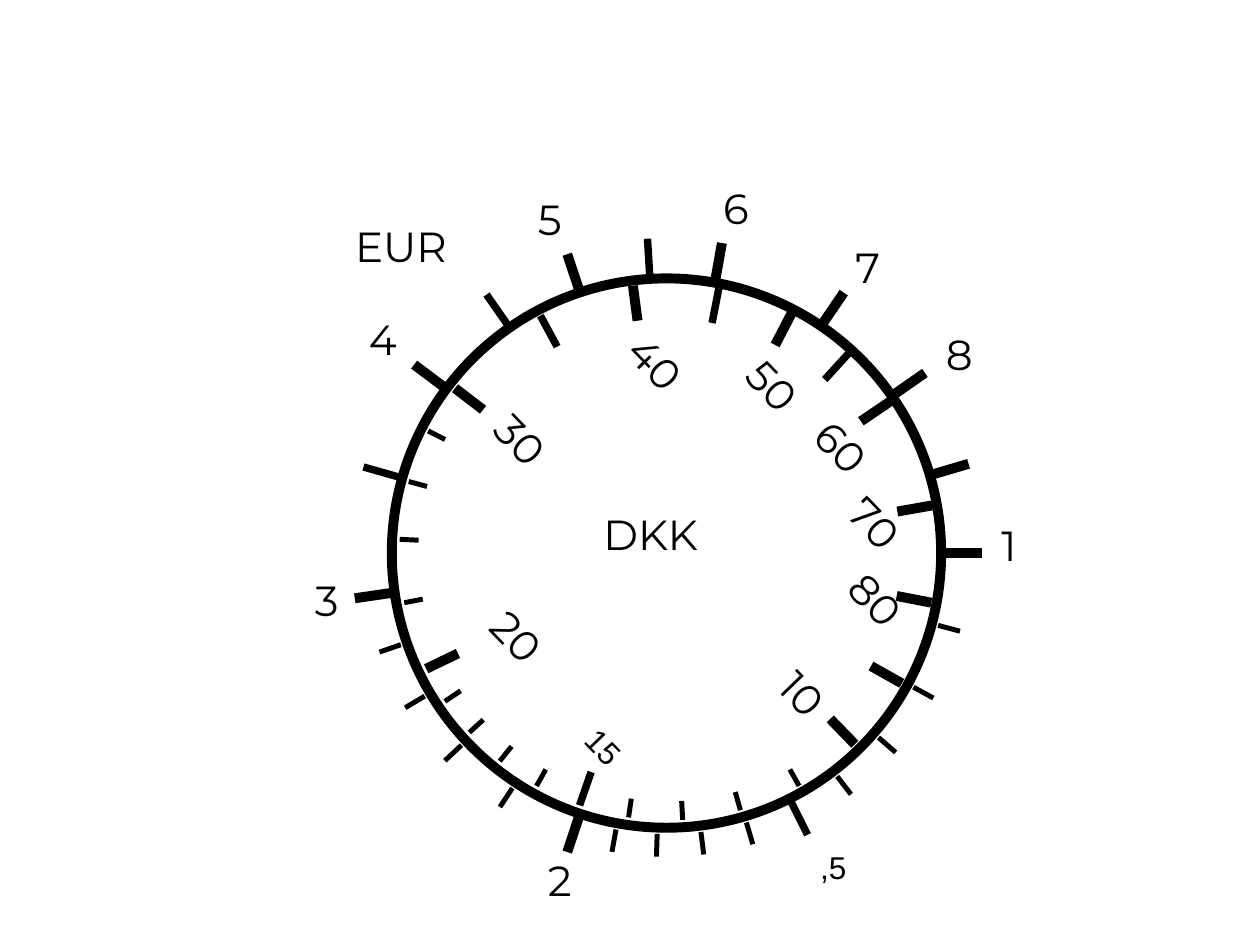
import math

from pptx import Presentation
from pptx import util as u
from pptx.dml.color import RGBColor
from pptx.enum import shapes, text
from pptx.oxml.ns import qn
from lxml import etree

COLORS = {"ink": "000000"}
CX, CY, RIM = 5.29, 4.39, 2.18
BOLD, MID, FINE = 5.67, 4.25, 2.83
SHIFT = 45.8  # turn of the inner scale against the outer, in degrees
TILT = 46  # turn of the inner numbers


def fill_text(frame, words, size=24, font="Montserrat", color="ink", wrap=False):
    frame.word_wrap = wrap
    run = frame.paragraphs[0].add_run()
    run.text = words
    run.font.size = u.Pt(size)
    run.font.name = font
    run.font.color.rgb = RGBColor.from_string(COLORS[color])


class Dial:
    def __init__(self, slide):
        self.slide = slide
        self.ink = RGBColor.from_string(COLORS["ink"])

    def tick(self, value, near, far, width, hub, turn):
        """Radial mark on a log scale that runs once round the ring."""
        angle = math.radians(360 * math.log10(value) + turn)
        ends = [u.Inches(mid + r * trig(angle)) for r in (near, far)
                for mid, trig in zip(hub, (math.cos, math.sin))]
        line = self.slide.shapes.add_connector(shapes.MSO_CONNECTOR.STRAIGHT, *ends)
        line.line.color.rgb = self.ink
        line.line.width = u.Pt(width)
        etree.SubElement(line._element.spPr, qn("a:effectLst"))

    def ring(self):
        box = [u.Inches(n) for n in (CX - RIM, CY - RIM, 2 * RIM, 2 * RIM)]
        ring = self.slide.shapes.add_shape(shapes.MSO_SHAPE.OVAL, *box)
        ring.shadow.inherit = False
        ring.fill.background()
        ring.line.color.rgb = self.ink
        ring.line.width = u.Pt(BOLD)

    def label(self, words, x, y, w, h, turn=0, **style):
        box = self.slide.shapes.add_textbox(*[u.Inches(n) for n in (x, y, w, h)])
        box.rotation = turn
        fill_text(box.text_frame, words, **style)
        return box

    def title(self, words, x, y):
        box = self.label(words, x, y, 1.34, 0.5, wrap=True)
        box.text_frame.auto_size = text.MSO_AUTO_SIZE.SHAPE_TO_FIT_TEXT


# Values on each scale, grouped by line width
WHOLE = range(1, 10)
HALVES = (1.5, 3.5, 4.5, 5.5)
PARTS = (1.1, 1.2, 1.3, 1.4, 1.6, 1.7, 1.8, 1.9, 2.2, 2.4, 2.6, 2.8)
OUTER = [(WHOLE, 2.17, 2.5, BOLD), (HALVES, 2.17, 2.5, MID), (PARTS, 2.23, 2.41, FINE)]
INNER = [(WHOLE, 1.85, 2.13, BOLD), (HALVES, 1.85, 2.13, MID), (PARTS, 1.98, 2.13, FINE)]

# Top left corners of the numbers
EUR = {"1": (7.85, 4.07), "2": (4.25, 6.73), "3": (2.4, 4.51), "4": (2.83, 2.44),
       "5": (4.17, 1.49), "6": (5.64, 1.4), "7": (6.69, 1.87), "8": (7.41, 2.56)}
DKK = {"10": (6.04, 5.29), "20": (3.75, 4.81), "30": (3.78, 3.25), "40": (4.84, 2.63),
       "50": (5.78, 2.82), "60": (6.32, 3.3), "70": (6.59, 3.91), "80": (6.59, 4.51)}


def main():
    deck = Presentation()
    deck.slide_width, deck.slide_height = u.Inches(10), u.Inches(7.5)
    dial = Dial(deck.slides.add_slide(deck.slide_layouts[6]))

    # Marks of both scales, with the ring between them
    def draw(scale, hub, turn=0):
        for values, *form in scale:
            for value in values:
                dial.tick(value, *form, hub, turn)

    draw(OUTER, (CX, CY))
    dial.ring()
    draw(INNER, (CX + 0.01, CY - 0.01), SHIFT)

    # Numbers
    for words, spot in EUR.items():
        dial.label(words, *spot, 0.43, 0.71)
    for words, spot in DKK.items():
        dial.label(words, *spot, 0.68, 0.61, turn=TILT)
    dial.label(",5", 6.41, 6.68, 0.55, 0.5, size=18, font="Arial")
    dial.label("15", 4.54, 5.73, 0.5, 0.43, turn=TILT, size=18, font="Arial")

    # Currency names
    dial.title("DKK", 4.69, 3.99)
    dial.title("EUR", 2.72, 1.7)

    deck.save("out.pptx")


if __name__ == "__main__":
    main()
